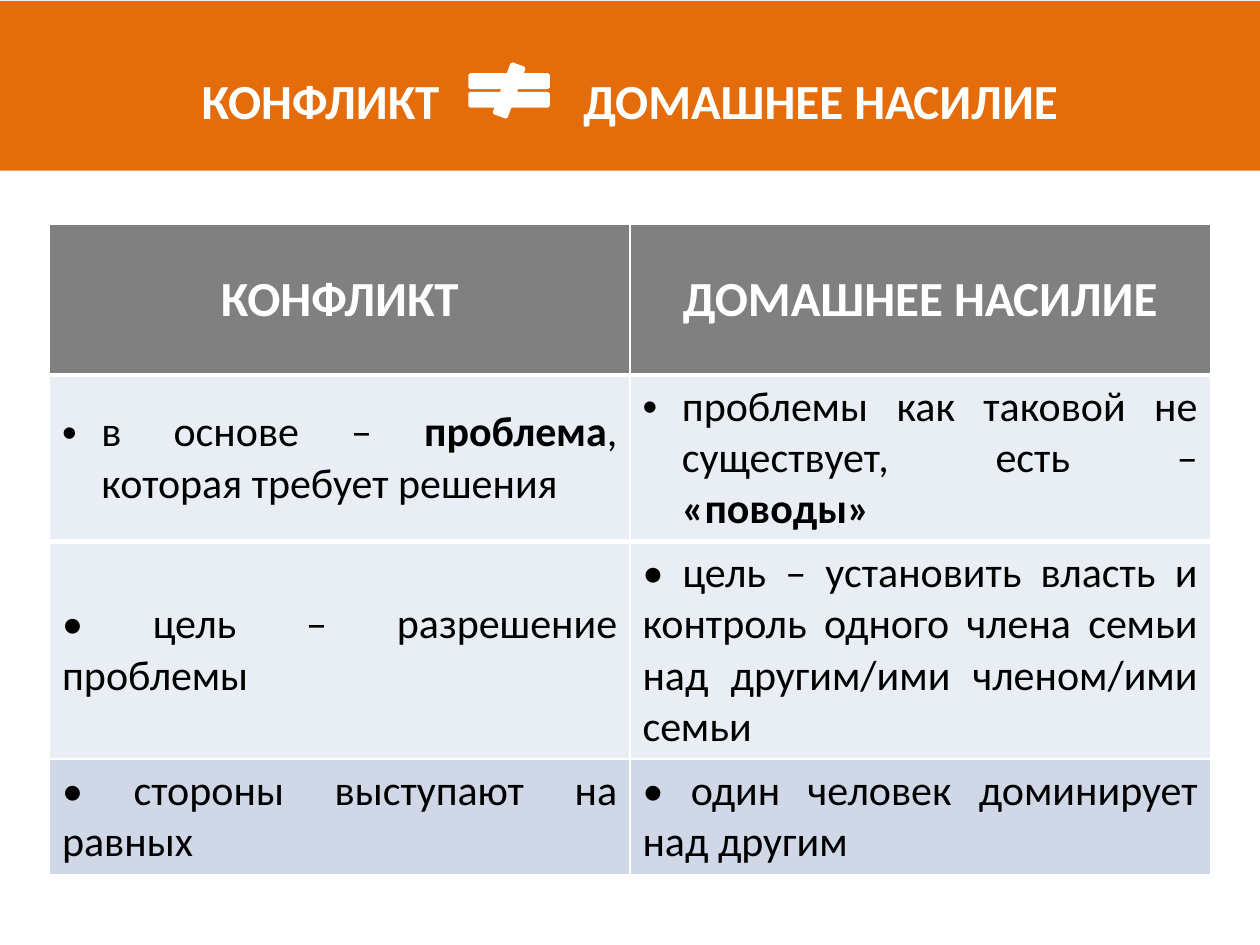
from pptx import Presentation
from pptx.dml.color import RGBColor
from pptx.enum.shapes import MSO_SHAPE as SHAPE
from pptx.enum.text import MSO_ANCHOR as ANCHOR, PP_ALIGN as ALIGN
from pptx.oxml import parse_xml
from pptx.oxml.ns import nsdecls
from pptx.util import Pt

WHITE, BLACK, ORANGE, GREY = "FFFFFF", "000000", "E46C0A", "808080"
PALE, BLUE = "E9EDF4", "D0D8E8"

# row height, fill, top border, bottom border, cell texts (** marks bold)
HEADINGS = ("КОНФЛИКТ", "ДОМАШНЕЕ НАСИЛИЕ")
ROWS = [
    (86, GREY, 1, 3, HEADINGS),
    (95, PALE, 3, 3, ("в основе – **проблема**, которая требует решения",
                      "проблемы как таковой не существует, есть – **«поводы»**")),
    (124.4, PALE, 3, 1, ("• цель – разрешение проблемы",
                         "• цель – установить власть и контроль одного члена семьи "
                         "над другим/ими членом/ими семьи")),
    (66, BLUE, 1, 1, ("• стороны выступают на равных",
                      "• один человек доминирует над другим")),
]
HEADER_ROW, BULLET_ROW = 0, 1


def rgb(color):
    return RGBColor.from_string(color)


def style(r, size, color, bold):
    r.font.name, r.font.size, r.font.bold = "Calibri", Pt(size), bold
    r.font.color.rgb = rgb(color)


def add_solid(s, shape, x, y, w, h, color):
    sp = s.shapes.add_shape(shape, Pt(x), Pt(y), Pt(w), Pt(h))
    sp.shadow.inherit = False
    sp.fill.solid()
    sp.fill.fore_color.rgb = rgb(color)
    sp.line.fill.background()
    return sp


def add_banner(s, x, y, w, h):
    sp = add_solid(s, SHAPE.RECTANGLE, x, y, w, h, ORANGE)
    tf = sp.text_frame
    tf.word_wrap = True
    tf.vertical_anchor = ANCHOR.MIDDLE
    tf.margin_left, tf.margin_top = Pt(116), Pt(20)
    p = tf.paragraphs[0]
    # The tab leaves room for the sign between the two words
    p._p.get_or_add_pPr().append(parse_xml(
        f'<a:tabLst {nsdecls("a")}><a:tab pos="{Pt(218)}" algn="l"/></a:tabLst>'))
    p.text = "\t".join(HEADINGS)
    p.alignment = ALIGN.LEFT
    for r in p.runs:
        style(r, 28, WHITE, True)

    # Not-equal sign
    sign = add_solid(s, SHAPE.MATH_NOT_EQUAL, x + 261.4, y + 36, 60.5, 30.2, WHITE)
    sign.line.color.rgb = rgb(WHITE)
    sign.line.width = Pt(2)


def set_borders(cell, top, bottom):
    widths = (("lnL", 1), ("lnR", 1), ("lnT", top), ("lnB", bottom))
    for i, (tag, width) in enumerate(widths):
        cell._tc.get_or_add_tcPr().insert(i, parse_xml(
            f'<a:{tag} {nsdecls("a")} w="{Pt(width)}"><a:solidFill>'
            f'<a:srgbClr val="{WHITE}"/></a:solidFill></a:{tag}>'))


def add_bullet(p, indent):
    pPr = p._p.get_or_add_pPr()
    pPr.set("marL", str(Pt(indent)))
    pPr.set("indent", str(-Pt(indent)))
    pPr.append(parse_xml(f'<a:buFont {nsdecls("a")} typeface="Arial"/>'))
    pPr.append(parse_xml(f'<a:buChar {nsdecls("a")} char="•"/>'))


def fill_cell(cell, text, row, color, top, bottom):
    cell.fill.solid()
    cell.fill.fore_color.rgb = rgb(color)
    set_borders(cell, top, bottom)
    cell.vertical_anchor = ANCHOR.MIDDLE
    header = row == HEADER_ROW
    p = cell.text_frame.paragraphs[0]
    if row == BULLET_ROW:
        add_bullet(p, 22.5)
    p.alignment = ALIGN.CENTER if header else ALIGN.JUSTIFY
    for i, part in enumerate(text.split("**")):
        if part:
            r = p.add_run()
            r.text = part
            style(r, 28 if header else 24, WHITE if header else BLACK,
                  header or i % 2 == 1)


def add_comparison(s, x, y, w):
    height = sum(row[0] for row in ROWS)
    table = s.shapes.add_table(len(ROWS), len(HEADINGS),
                               Pt(x), Pt(y), Pt(w), Pt(height)).table
    table.first_row = table.horz_banding = False
    for column in table.columns:
        column.width = Pt(w / len(HEADINGS))
    for i, (h, color, top, bottom, texts) in enumerate(ROWS):
        table.rows[i].height = Pt(h)
        for j, text in enumerate(texts):
            fill_cell(table.cell(i, j), text, i, color, top, bottom)


def main():
    prs = Presentation()
    prs.slide_width, prs.slide_height = Pt(720), Pt(540)
    s = prs.slides.add_slide(prs.slide_layouts[6])
    add_comparison(s, 28.3, 128.3, 663.4)
    add_banner(s, -0.7, 0.6, 721, 97)
    prs.save("out.pptx")


if __name__ == "__main__":
    main()
